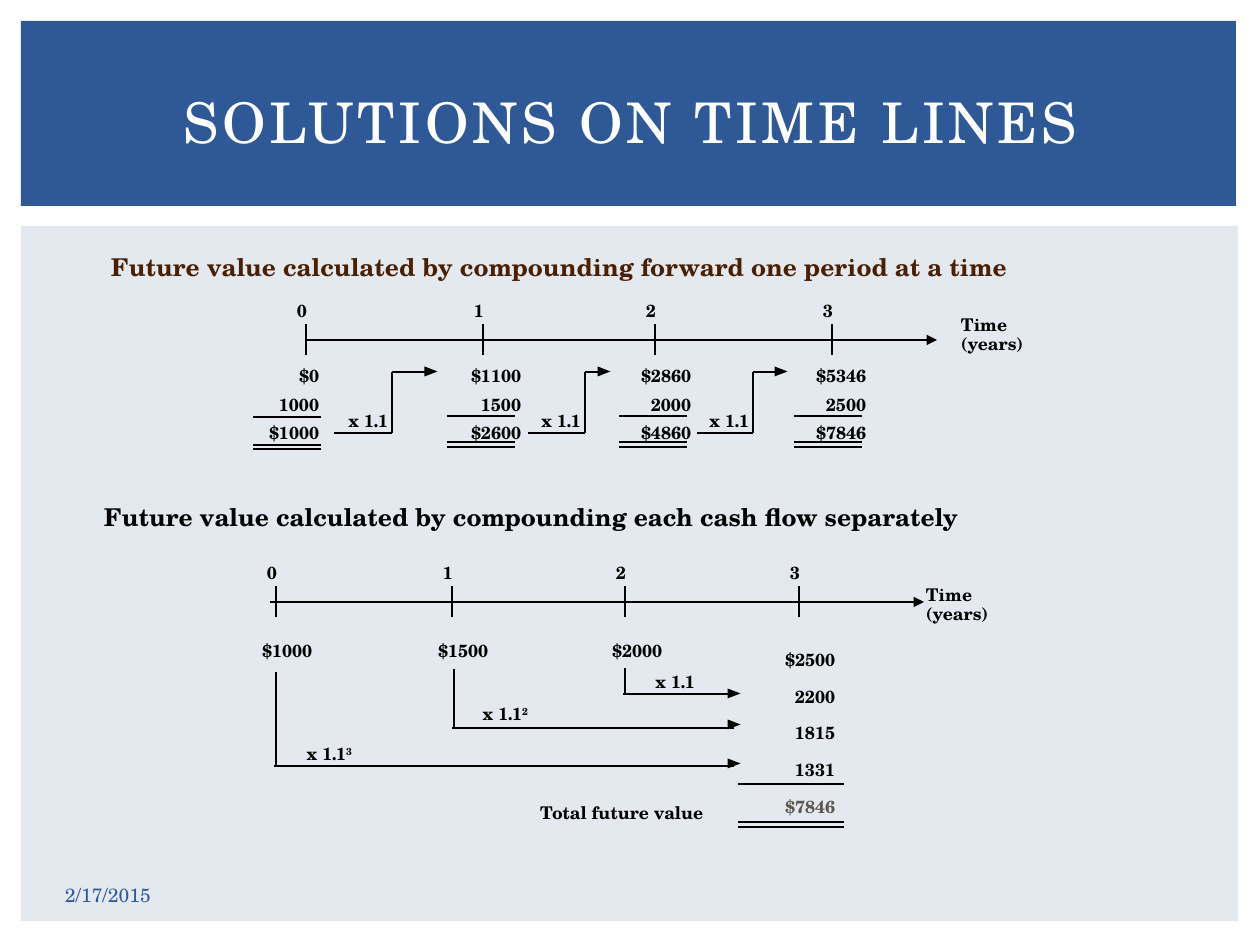
from dataclasses import dataclass

from lxml import etree
from pptx import Presentation
from pptx.dml.color import RGBColor
from pptx.enum.shapes import MSO_CONNECTOR, MSO_SHAPE
from pptx.enum.text import MSO_ANCHOR, PP_ALIGN
from pptx.oxml.ns import qn
from pptx.util import Emu, Pt

LEFT, MID, RIGHT = PP_ALIGN.LEFT, PP_ALIGN.CENTER, PP_ALIGN.RIGHT
TOP, CENTER = MSO_ANCHOR.TOP, MSO_ANCHOR.MIDDLE
RECT, HEAD = MSO_SHAPE.RECTANGLE, MSO_SHAPE.ISOSCELES_TRIANGLE
STRAIGHT = MSO_CONNECTOR.STRAIGHT
SCALE = 914400 / 126


@dataclass(frozen=True)
class Theme:
    font: str = "TeX Gyre Schola"
    blue: str = "2F5897"
    panel: str = "E4E9EF"
    white: str = "FFFFFF"
    brown: str = "4A2004"
    black: str = "000000"
    gray: str = "5E574E"
    title: int = 32
    lead: int = 14
    date: int = 11
    body: int = 10


THEME = Theme()


@dataclass(frozen=True)
class Run:
    text: str
    color: str = THEME.black
    size: int = THEME.body
    bold: bool = True
    base: int = 0
    track: int = 0


@dataclass(frozen=True)
class Axis:
    y: int
    start: int
    end: int
    ticks: tuple[int, ...]
    note: tuple[int, int]


@dataclass(frozen=True)
class Sum:
    right: int
    rule: int
    lines: tuple[int, int, int]
    text: str


@dataclass(frozen=True)
class Step:
    start: int
    rise: int
    head: int


@dataclass(frozen=True)
class Flow:
    x: int
    right: int
    text: str
    top: int
    y: int
    tip: int
    note: tuple[int, int]
    power: str


AXES = (
    Axis(340, 306, 937, (306, 483, 655, 832), (950, 310)),
    Axis(602, 270, 924, (276, 452, 625, 799), (915, 580)),
)
SUMS = (
    Sum(330, 253, (417, 445, 449), "$0\n1000\n$1000"),
    Sum(532, 447, (416, 442, 447), "$1100\n1500\n$2600"),
    Sum(702, 619, (416, 442, 447), "$2860\n2000\n$4860"),
    Sum(877, 794, (416, 442, 447), "$5346\n2500\n$7846"),
)
STEPS = (Step(334, 392, 426), Step(528, 585, 599), Step(697, 753, 776))
FLOWS = (
    Flow(276, 323, "$1000", 672, 766, 764, (276, 730), "3"),
    Flow(454, 499, "$1500", 669, 728, 725, (452, 690), "2"),
    Flow(625, 673, "$2000", 668, 694, 694, (619, 658), ""),
)


def px(n: float) -> Emu:
    return Emu(round(n * SCALE))


def shape(slide, kind, x: int, y: int, w: int, h: int, color: str):
    item = slide.shapes.add_shape(kind, px(x), px(y), px(w), px(h))
    item.shadow.inherit = False
    item.fill.solid()
    item.fill.fore_color.rgb = RGBColor.from_string(color)
    item.line.fill.background()
    return item


def line(slide, x1: int, y1: int, x2: int, y2: int, tail: bool = False) -> None:
    item = slide.shapes.add_connector(STRAIGHT, px(x1), px(y1), px(x2), px(y2))
    item.line.width = Pt(1)
    item.line.color.rgb = RGBColor.from_string(THEME.black)
    if tail:
        etree.SubElement(item.line._get_or_add_ln(), qn("a:tailEnd"), type="triangle")
    etree.SubElement(item._element.spPr, qn("a:effectLst"))


def head(slide, x: int, y: int) -> None:
    """Draw a solid arrowhead pointing right, centred on height y."""
    shape(slide, HEAD, x, y - 7, 10, 13, THEME.black).rotation = 90


def text(slide, x: int, y: int, w: int, h: int, *runs: Run, align=LEFT,
         space: float = 1.35, anchor=TOP, inset: int = 11) -> None:
    frame = slide.shapes.add_textbox(px(x), px(y), px(w), px(h)).text_frame
    frame.word_wrap = True
    frame.vertical_anchor = anchor
    frame.margin_left = frame.margin_right = px(inset)
    frame.margin_top = frame.margin_bottom = px(6)
    para = frame.paragraphs[0]
    para.alignment = align
    para.line_spacing = space
    for run in runs:
        for i, part in enumerate(run.text.split("\n")):
            if i:
                para.add_line_break()
            if not part:
                continue
            item = para.add_run()
            item.text = part
            item.font.name = THEME.font
            item.font.size = Pt(run.size)
            item.font.bold = run.bold
            item.font.color.rgb = RGBColor.from_string(run.color)
            props = item.font._element
            if run.base:
                props.set("baseline", str(run.base))
            if run.track:
                props.set("spc", str(run.track))


def draw_axis(slide, axis: Axis) -> None:
    line(slide, axis.start, axis.y, axis.end, axis.y, tail=True)
    text(slide, *axis.note, 100, 54, Run("Time\n(years)"), space=0.9)
    for year, x in enumerate(axis.ticks):
        line(slide, x, axis.y - 16, x, axis.y + 15)
        text(slide, x - 20, axis.y - 53, 35, 38, Run(str(year)))


def draw_sum(slide, item: Sum) -> None:
    text(slide, item.right - 107, 352, 107, 124, Run(item.text), align=RIGHT)
    for y in item.lines:
        line(slide, item.rule, y, item.rule + 68, y)


def draw_step(slide, step: Step) -> None:
    line(slide, step.start, 433, step.rise, 433)
    line(slide, step.rise, 433, step.rise, 372)
    line(slide, step.rise, 372, step.head + 4, 372)
    head(slide, step.head, 372)
    text(slide, step.rise - 79, 397, 86, 42, Run("x 1.1"), align=RIGHT)


def draw_flow(slide, flow: Flow) -> None:
    text(slide, flow.right - 107, 627, 107, 124, Run(flow.text), align=RIGHT)
    line(slide, flow.x, flow.top, flow.x, flow.y)
    line(slide, flow.x - 2, flow.y, 734, flow.y)
    head(slide, 729, flow.tip)
    text(slide, *flow.note, 87, 37, Run("x 1.1"), Run(flow.power, base=30000),
         align=RIGHT)


def main() -> None:
    deck = Presentation()
    deck.slide_width, deck.slide_height = px(1260), px(945)
    slide = deck.slides.add_slide(deck.slide_layouts[6])
    shape(slide, RECT, 21, 226, 1217, 695, THEME.panel)
    shape(slide, RECT, 21, 21, 1215, 185, THEME.blue)
    text(slide, 53, 49, 1155, 145,
         Run("SOLUTIONS ON TIME LINES", THEME.white, THEME.title, False, track=200),
         align=MID, space=1, anchor=CENTER)
    text(slide, 100, 246, 1070, 53,
         Run("Future value calculated by compounding forward one period at a time",
             THEME.brown, THEME.lead), space=1)
    text(slide, 91, 499, 1169, 39,
         Run("Future value calculated by compounding each cash flow separately",
             size=THEME.lead), space=0.9, inset=13)
    for axis in AXES:
        draw_axis(slide, axis)
    for item in SUMS:
        draw_sum(slide, item)
    for step in STEPS:
        draw_step(slide, step)
    for flow in FLOWS:
        draw_flow(slide, flow)
    text(slide, 701, 627, 145, 195, Run("$2500\n2200\n1815\n1331\n"),
         Run("$7846", THEME.gray), align=RIGHT, space=1.75)
    for y in (784, 822, 827):
        line(slide, 738, y, 844, y)
    text(slide, 441, 789, 273, 42, Run("Total future value"), align=RIGHT)
    text(slide, 52, 876, 294, 38, Run("2/17/2015", THEME.blue, THEME.date, False),
         space=1, anchor=CENTER, inset=13)
    deck.save("out.pptx")


if __name__ == "__main__":
    main()
